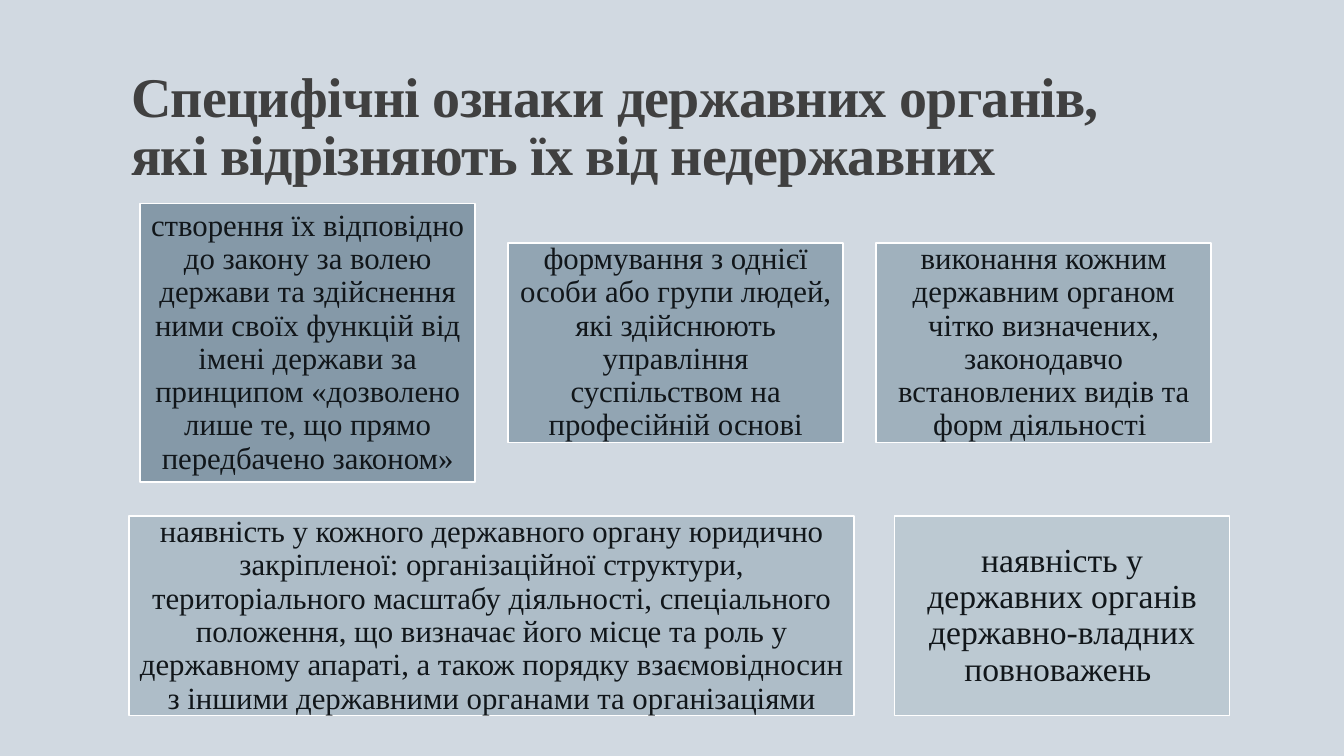
import pptx
import pptx.dml.color
import pptx.enum.shapes
import pptx.enum.text
import pptx.util

Inches, Pt = pptx.util.Inches, pptx.util.Pt
ALIGN, ANCHOR = pptx.enum.text.PP_ALIGN, pptx.enum.text.MSO_ANCHOR


def colour(hex_string):
    return pptx.dml.color.RGBColor.from_string(hex_string)


class FeatureSlide:
    font = "Times New Roman"
    title_ink, box_ink, outline = "404040", "11161A", "FFFFFF"
    # Grid: left edge of column 0, centre of row 0, and the pitch of each
    left, first_row = 1.39, 3.4
    column, row = 3.65, 2.71

    def __init__(self, deck, background):
        self.slide = deck.slides.add_slide(deck.slide_layouts[5])
        fill = self.slide.background.fill
        fill.solid()
        fill.fore_color.rgb = colour(background)

    def add_words(self, paragraph, words, size, ink, bold=False):
        run = paragraph.add_run()
        run.text = words
        run.font.name, run.font.size, run.font.bold = self.font, Pt(size), bold
        run.font.color.rgb = colour(ink)
        return run

    def title(self, lines):
        heading = self.slide.shapes.title
        heading.left, heading.top = Inches(1.2), Inches(0.31)
        heading.width, heading.height = Inches(11), Inches(1.59)
        frame = heading.text_frame
        frame.word_wrap = True
        frame.auto_size = pptx.enum.text.MSO_AUTO_SIZE.NONE
        frame.vertical_anchor = ANCHOR.BOTTOM
        paragraph = frame.paragraphs[0]
        paragraph.alignment, paragraph.line_spacing = ALIGN.LEFT, 0.85
        for number, line in enumerate(lines):
            if number:
                paragraph.add_line_break()
            run = self.add_words(paragraph, line, 40, self.title_ink, bold=True)
            run.font._element.set("spc", "-50")  # tighter letter spacing

    def box(self, words, fill, column, row, columns=0.91, rows=0.73, size=22):
        """Place a box by its left column and the row it is centred on."""
        width, height = columns * self.column, rows * self.row
        feature = self.slide.shapes.add_shape(
            pptx.enum.shapes.MSO_SHAPE.RECTANGLE,
            Inches(self.left + column * self.column),
            Inches(self.first_row + row * self.row - height / 2),
            Inches(width), Inches(height))
        feature.shadow.inherit = False
        feature.fill.solid()
        feature.fill.fore_color.rgb = colour(fill)
        feature.line.color.rgb = colour(self.outline)
        feature.line.width = Pt(1.25)
        frame = feature.text_frame
        frame.word_wrap = True
        frame.vertical_anchor = ANCHOR.MIDDLE
        frame.margin_left = frame.margin_right = Inches(0.09)
        frame.margin_top = frame.margin_bottom = Inches(0.09)
        paragraph = frame.paragraphs[0]
        paragraph.alignment, paragraph.line_spacing = ALIGN.CENTER, 0.9
        self.add_words(paragraph, words, size, self.box_ink)


def main():
    deck = pptx.Presentation()
    deck.slide_width, deck.slide_height = Inches(13.33), Inches(7.5)
    features = FeatureSlide(deck, "D1D9E1")
    features.title(["Специфічні ознаки державних органів,",
                    "які відрізняють їх від недержавних"])

    # Upper row: three equal columns
    features.box("створення їх відповідно до закону за волею держави та "
                 "здійснення ними своїх функцій від імені держави за "
                 "принципом «дозволено лише те, що прямо передбачено "
                 "законом»", "8599A8", 0, 0, rows=1.02)
    features.box("формування з однієї особи або групи людей, які здійснюють "
                 "управління суспільством на професійній основі",
                 "92A5B3", 1, 0)
    features.box("виконання кожним державним органом чітко визначених, "
                 "законодавчо встановлених видів та форм діяльності ",
                 "A0B1BD", 2, 0)

    # Lower row: a wide box and a narrow one
    features.box("наявність у кожного державного органу юридично "
                 "закріпленої: організаційної структури, територіального "
                 "масштабу діяльності, спеціального положення, що визначає "
                 "його місце та роль у державному апараті, а також порядку "
                 "взаємовідносин з іншими державними органами та "
                 "організаціями", "AEBDC8", -0.03, 1, columns=1.97)
    features.box("наявність у державних органів державно-владних "
                 "повноважень ", "BCC9D2", 2.05, 1, size=24)

    deck.save("out.pptx")


if __name__ == "__main__":
    main()
